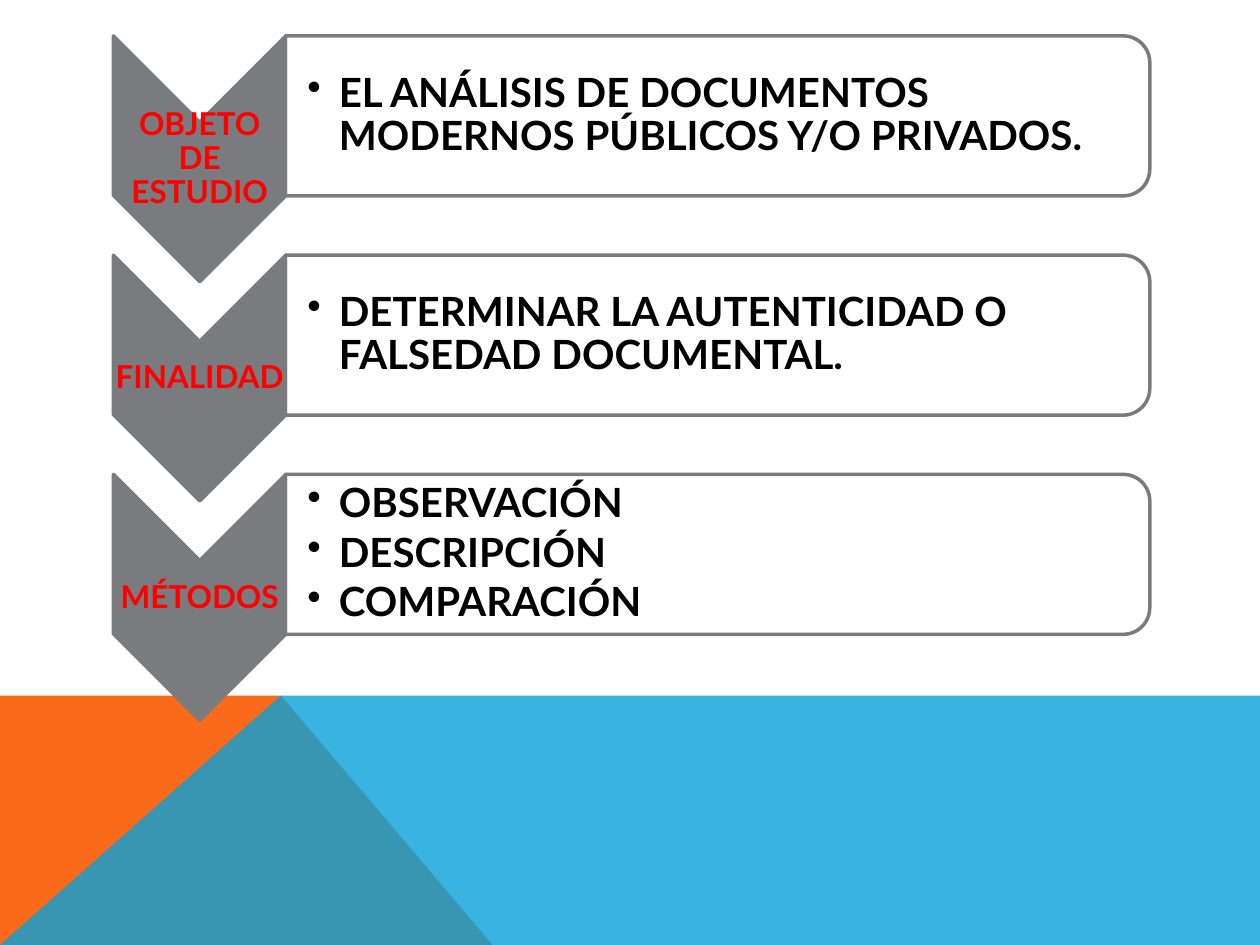
from dataclasses import dataclass

from lxml.etree import SubElement
from pptx import Presentation
from pptx.dml.color import RGBColor
from pptx.enum.shapes import MSO_SHAPE as Preset
from pptx.enum.text import MSO_ANCHOR as Anchor, PP_ALIGN as Align
from pptx.oxml.ns import qn
from pptx.util import Inches, Pt

COLORS = {
    "orange": "F96A1B",
    "blue": "08A1D9",
    "gray": "797B7E",
    "panel": "FFFFFF",
    "label": "FF0000",
    "detail": "000000",
}
FONT = "Lato"
COLUMNS, ROWS = 100, 75
BAND_TOP, PEAK, SLOPE_END = 55.2, 22.3, 39.1
FIRST_TOP, STEP_PITCH = 2.85, 17.4


@dataclass(frozen=True)
class Box:
    left: float
    top: float
    width: float
    height: float


@dataclass(frozen=True)
class Step:
    label: str
    details: tuple[str, ...]


STEPS = (
    Step("OBJETO DE ESTUDIO", ("EL ANÁLISIS DE DOCUMENTOS MODERNOS PÚBLICOS Y/O PRIVADOS.",)),
    Step("FINALIDAD", ("DETERMINAR LA AUTENTICIDAD O FALSEDAD DOCUMENTAL.",)),
    Step("MÉTODOS", ("OBSERVACIÓN", "DESCRIPCIÓN", "COMPARACIÓN")),
)

deck = Presentation()
deck.slide_width, deck.slide_height = Inches(10), Inches(7.5)
COL, ROW = deck.slide_width / COLUMNS, deck.slide_height / ROWS
slide = deck.slides.add_slide(deck.slide_layouts[6])


def place(box: Box) -> tuple[int, int, int, int]:
    return (round(box.left * COL), round(box.top * ROW),
            round(box.width * COL), round(box.height * ROW))


def paint(shape, color: str, opacity: int = 100, outline: str | None = None) -> None:
    shape.shadow.inherit = False
    shape.fill.solid()
    shape.fill.fore_color.rgb = RGBColor.from_string(COLORS[color])
    if opacity < 100:
        tone = shape.fill._xPr.find(qn("a:solidFill"))[0]
        SubElement(tone, qn("a:alpha"), val=str(opacity * 1000))
    if outline:
        shape.line.color.rgb = RGBColor.from_string(COLORS[outline])
        shape.line.width = Pt(2)
    else:
        shape.line.fill.background()


def add_band(corners: list[tuple[float, float]], color: str, opacity: int = 100) -> None:
    points = [(round(x * COL), round(y * ROW)) for x, y in corners]
    outline = slide.shapes.build_freeform(*points[0])
    outline.add_line_segments(points[1:], close=True)
    paint(outline.convert_to_shape(), color, opacity)


def add_turned(preset: Preset, box: Box, color: str, opacity: int = 100) -> None:
    left, top, width, height = place(box)
    shift = (width - height) // 2
    shape = slide.shapes.add_shape(preset, left + shift, top - shift, height, width)
    shape.rotation = 90
    paint(shape, color, opacity, outline="gray")


def add_text(box: Box, lines: tuple[str, ...], *, size: float, color: str,
             align: Align = Align.LEFT, inset: float = 0.01,
             left_inset: float = 0.01, after: float = 0, bullet: bool = False) -> None:
    frame = slide.shapes.add_textbox(*place(box)).text_frame
    frame.word_wrap = True
    frame.vertical_anchor = Anchor.MIDDLE
    frame.margin_left = Inches(left_inset)
    frame.margin_top = frame.margin_right = frame.margin_bottom = Inches(inset)
    for index, line in enumerate(lines):
        paragraph = frame.add_paragraph() if index else frame.paragraphs[0]
        paragraph.alignment = align
        paragraph.line_spacing = 0.9
        paragraph.space_after = Pt(after)
        run = paragraph.add_run()
        run.text = line
        run.font.name, run.font.size, run.font.bold = FONT, Pt(size), True
        run.font.color.rgb = RGBColor.from_string(COLORS[color])
        if bullet:
            properties = paragraph._p.get_or_add_pPr()
            properties.set("marL", str(Inches(0.25)))
            properties.set("indent", str(-Inches(0.25)))
            SubElement(properties, qn("a:buChar"), char="•")


def add_step(step: Step, top: float) -> None:
    add_turned(Preset.CHEVRON, Box(9, top, 13.7, 19.5), "gray")
    add_text(Box(9, top + 6.85, 13.7, 5.9), (step.label,),
             size=18, color="label", align=Align.CENTER, after=6.3)
    add_turned(Preset.ROUND_2_SAME_RECTANGLE, Box(22.65, top, 68.6, 12.7), "panel", 90)
    add_text(Box(22.6, top + 0.65, 68, 11.4), step.details, size=23, color="detail",
             inset=0.02, left_inset=0.18, after=3.45, bullet=True)


add_band([(0, ROWS), (0, BAND_TOP), (PEAK, BAND_TOP), (SLOPE_END, ROWS)], "orange")
add_band([(0, ROWS), (PEAK, BAND_TOP), (COLUMNS, BAND_TOP), (COLUMNS, ROWS)], "blue", 80)
for position, step in enumerate(STEPS):
    add_step(step, FIRST_TOP + position * STEP_PITCH)

deck.save("out.pptx")
